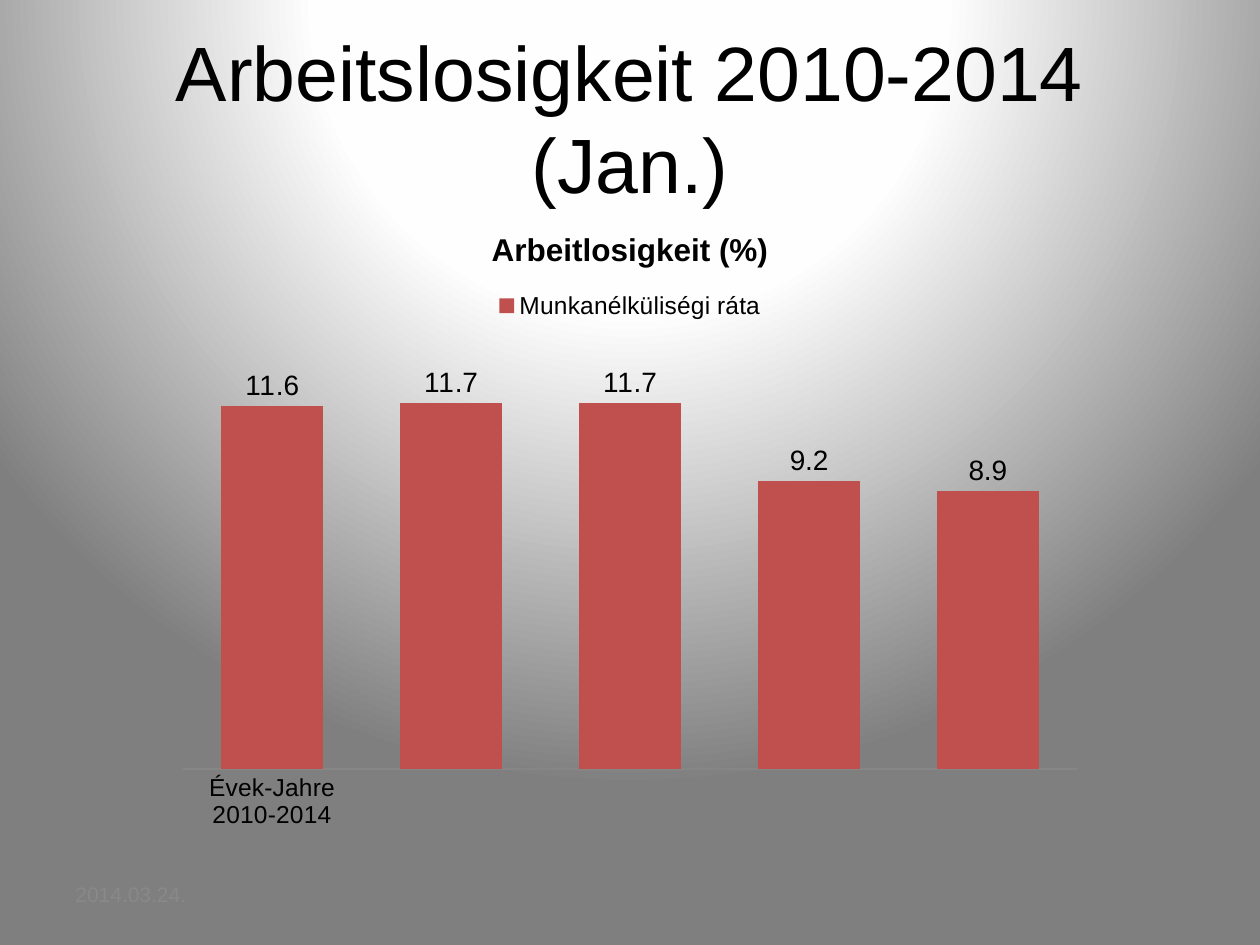
from lxml.etree import SubElement
from pptx import Presentation
from pptx.chart.data import CategoryChartData
from pptx.dml.color import RGBColor
from pptx.enum.chart import XL_CHART_TYPE, XL_LABEL_POSITION, XL_LEGEND_POSITION, XL_TICK_MARK
from pptx.enum.text import MSO_ANCHOR, PP_ALIGN
from pptx.oxml import parse_xml
from pptx.oxml.ns import nsdecls, qn
from pptx.util import Emu, Pt

FONT = "Arial"
BLACK = "000000"
BACKGROUND_STOPS = [(0, "FFFFFF"), (40, "FEFEFE"), (100, "7F7F7F")]
CATEGORIES = ["Évek-Jahre 2010-2014", "", "", "", ""]
RATES = [11.6, 11.7, 11.7, 9.2, 8.9]


def px(length):
    return Emu(round(length * 914400 / 126))


def color(hex_value):
    return RGBColor.from_string(hex_value)


def style_font(font, size, hex_value=BLACK, bold=False):
    font.name = FONT
    font.size = Pt(size)
    font.bold = bold
    font.color.rgb = color(hex_value)


def set_background(slide):
    """Fill the slide with a circular gradient centred above its top edge."""
    stops = "".join(
        f'<a:gs pos="{position * 1000}"><a:srgbClr val="{hex_value}"/></a:gs>'
        for position, hex_value in BACKGROUND_STOPS
    )
    background = parse_xml(
        f'<p:bg {nsdecls("p", "a")}><p:bgPr><a:gradFill rotWithShape="1">'
        f'<a:gsLst>{stops}</a:gsLst><a:path path="circle">'
        '<a:fillToRect l="50000" t="-80000" r="50000" b="180000"/></a:path>'
        '</a:gradFill><a:effectLst/></p:bgPr></p:bg>'
    )
    slide.element.cSld.insert(0, background)


def fill_text(shape, text, size, hex_value, alignment):
    frame = shape.text_frame
    frame.word_wrap = True
    frame.vertical_anchor = MSO_ANCHOR.MIDDLE
    frame.text = text
    paragraph = frame.paragraphs[0]
    paragraph.alignment = alignment
    style_font(paragraph.font, size, hex_value)


def add_title(slide, text):
    title = slide.shapes.title
    title.left, title.top, title.width, title.height = map(px, (63, 38, 1134, 158))
    fill_text(title, text, 44, BLACK, PP_ALIGN.CENTER)


def add_date(slide, text):
    date = slide.shapes.add_textbox(px(63), px(869), px(294), px(50))
    fill_text(date, text, 12, "898989", PP_ALIGN.LEFT)


def set_plot_layout(chart, **fractions):
    """Place the inner plot area by fractions of the chart frame."""
    plot_area = chart.element.find(".//" + qn("c:plotArea"))
    layout = plot_area.find(qn("c:layout"))
    if layout is None:
        layout = parse_xml(f'<c:layout {nsdecls("c")}/>')
        plot_area.insert(0, layout)
    manual = SubElement(layout, qn("c:manualLayout"))
    settings = {"layoutTarget": "inner", "xMode": "edge", "yMode": "edge", **fractions}
    for name, value in settings.items():
        SubElement(manual, qn(f"c:{name}")).set("val", str(value))


def add_unemployment_chart(slide):
    data = CategoryChartData(number_format="0.0")
    data.categories = CATEGORIES
    data.add_series("Munkanélküliségi ráta", RATES)
    chart = slide.shapes.add_chart(
        XL_CHART_TYPE.COLUMN_CLUSTERED, px(164), px(204), px(932), px(635), data
    ).chart
    style_font(chart.font, 10)

    chart.has_title = True
    title_frame = chart.chart_title.text_frame
    title_frame.text = "Arbeitlosigkeit (%)"
    style_font(title_frame.paragraphs[0].font, 18, bold=True)
    chart.chart_title.include_in_layout = False

    chart.has_legend = True
    chart.legend.position = XL_LEGEND_POSITION.TOP
    chart.legend.include_in_layout = False
    style_font(chart.legend.font, 14)

    category_axis = chart.category_axis
    category_axis.major_tick_mark = XL_TICK_MARK.NONE
    category_axis.format.line.color.rgb = color("868686")
    style_font(category_axis.tick_labels.font, 14)
    value_axis = chart.value_axis
    value_axis.minimum_scale, value_axis.maximum_scale = 0, 14
    value_axis.has_major_gridlines = False
    value_axis.visible = False

    plot = chart.plots[0]
    plot.gap_width = 75
    plot.vary_by_categories = False
    series = plot.series[0]
    series.format.fill.solid()
    series.format.fill.fore_color.rgb = color("C0504D")
    labels = series.data_labels
    labels.show_value = True
    labels.position = XL_LABEL_POSITION.OUTSIDE_END
    style_font(labels.font, 16)
    set_plot_layout(chart, x=0.02, y=0.2, w=0.96, h=0.69)


def main():
    presentation = Presentation()
    presentation.slide_width, presentation.slide_height = px(1260), px(945)
    slide = presentation.slides.add_slide(presentation.slide_layouts[5])
    set_background(slide)
    add_title(slide, "Arbeitslosigkeit 2010-2014 (Jan.)")
    add_unemployment_chart(slide)
    add_date(slide, "2014.03.24.")
    presentation.save("out.pptx")


if __name__ == "__main__":
    main()
